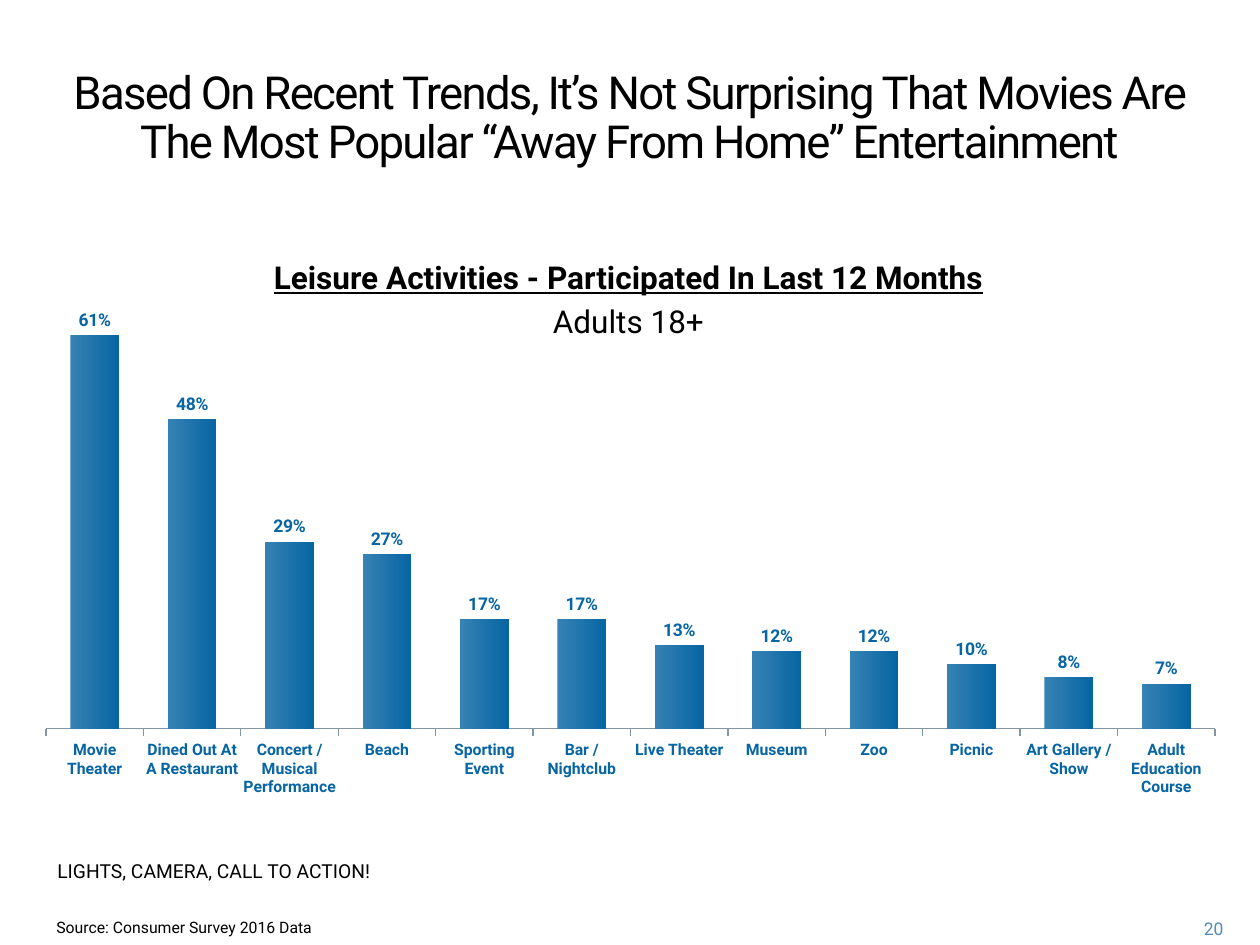
from lxml.etree import SubElement
from pptx import Presentation
from pptx.chart.data import CategoryChartData
from pptx.dml.color import RGBColor
from pptx.enum.chart import XL_CHART_TYPE, XL_LABEL_POSITION, XL_TICK_LABEL_POSITION, XL_TICK_MARK
from pptx.enum.text import MSO_ANCHOR, MSO_AUTO_SIZE, PP_ALIGN
from pptx.oxml import parse_xml
from pptx.oxml.ns import nsdecls, qn
from pptx.util import Emu, Pt

BLACK, BLUE, LIGHT_BLUE, NUMBER_BLUE, GREY = "000000", "0765A3", "3682B4", "508ABA", "8395A2"
LEFT, CENTER, RIGHT = PP_ALIGN.LEFT, PP_ALIGN.CENTER, PP_ALIGN.RIGHT

ACTIVITIES = {
    "Movie Theater": 0.61,
    "Dined Out At A Restaurant": 0.48,
    "Concert / Musical Performance": 0.29,
    "Beach": 0.27,
    "Sporting Event": 0.17,
    "Bar / Nightclub": 0.17,
    "Live Theater": 0.13,
    "Museum": 0.12,
    "Zoo": 0.12,
    "Picnic": 0.1,
    "Art Gallery / Show": 0.08,
    "Adult Education Course": 0.07,
}


def px(n):
    return Emu(round(n * 914400 / 126))


def rgb(color):
    return RGBColor.from_string(color)


class Deck:
    """Holds the style and the current slide, with a method for each kind of element."""

    def __init__(self, font):
        self.font = font
        self.prs = Presentation()
        self.prs.slide_width, self.prs.slide_height = px(1260), px(945)
        self.s = self.prs.slides.add_slide(self.prs.slide_layouts[1])

    def style(self, font, size, color, bold=False):
        font.name, font.size, font.bold = self.font, Pt(size), bold
        font.color.rgb = rgb(color)

    def frame(self, sp, x, y, w, h):
        sp.left, sp.top, sp.width, sp.height = px(x), px(y), px(w), px(h)
        tf = sp.text_frame
        tf.word_wrap = True
        tf.auto_size = MSO_AUTO_SIZE.NONE
        tf.vertical_anchor = MSO_ANCHOR.TOP
        return tf

    def run(self, p, text, size, color=BLACK, bold=False):
        r = p.add_run()
        r.text = text
        self.style(r.font, size, color, bold)
        return r

    def title(self, text, box, size, leading):
        p = self.frame(self.s.shapes.title, *box).paragraphs[0]
        p.alignment, p.line_spacing = CENTER, Pt(leading)
        r = self.run(p, text, size)
        r.font._element.set("spc", "-100")

    def heading(self, lines, box, size):
        sp = self.s.placeholders[1]
        tf = self.frame(sp, *box)
        for i, (text, strong) in enumerate(lines):
            p = tf.add_paragraph() if i else tf.paragraphs[0]
            pPr = p._p.get_or_add_pPr()
            pPr.set("marL", "0")
            pPr.set("indent", "0")
            SubElement(pPr, qn("a:buNone"))
            p.alignment = CENTER
            p.space_before = Pt(0.2 * size if i else 0)
            r = self.run(p, text, size, bold=strong)
            r.font.underline = strong
        self.s.shapes._spTree.append(sp._element)

    def text(self, text, box, size, color=BLACK, align=LEFT):
        sp = self.s.shapes.add_textbox(0, 0, 0, 0)
        p = self.frame(sp, *box).paragraphs[0]
        p.alignment = align
        self.run(p, text, size, color)

    def columns(self, values, box, plot, top):
        data = CategoryChartData(number_format="0%")
        data.categories = list(values)
        data.add_series("Series 1", list(values.values()))
        x, y, w, h = box
        chart = self.s.shapes.add_chart(
            XL_CHART_TYPE.COLUMN_CLUSTERED, px(x), px(y), px(w), px(h), data).chart
        self.style(chart.font, 18, BLACK)
        chart.has_legend = chart.has_title = False

        cat = chart.category_axis
        cat.major_tick_mark = XL_TICK_MARK.OUTSIDE
        cat.tick_label_position = XL_TICK_LABEL_POSITION.LOW
        cat.format.line.color.rgb, cat.format.line.width = rgb(GREY), Pt(0.75)
        self.style(cat.tick_labels.font, 9, BLUE, True)
        val = chart.value_axis
        val.minimum_scale, val.maximum_scale = 0, top
        val.has_major_gridlines = val.visible = False

        bars = chart.plots[0]
        bars.gap_width, bars.overlap, bars.vary_by_categories = 100, -20, False
        fill = bars.series[0].format.fill
        fill.gradient()
        fill.gradient_angle = 0
        for stop, color, position in zip(fill.gradient_stops, (LIGHT_BLUE, BLUE), (0, 1)):
            stop.color.rgb, stop.position = rgb(color), position
        bars.has_data_labels = True
        labels = bars.data_labels
        labels.show_value, labels.position = True, XL_LABEL_POSITION.OUTSIDE_END
        labels.number_format, labels.number_format_is_linked = "0%", False
        self.style(labels.font, 10, BLUE, True)
        self.place_plot(chart, box, plot)

    def place_plot(self, chart, box, plot):
        x, y, w, h = box
        left, top, width, height = plot
        parts = {"x": (left - x) / w, "y": (top - y) / h, "w": width / w, "h": height / h}
        area = chart._chartSpace.chart.plotArea
        for old in area.findall(qn("c:layout")):
            area.remove(old)
        sizes = "".join(f'<c:{k} val="{v:.4f}"/>' for k, v in parts.items())
        area.insert(0, parse_xml(
            f'<c:layout {nsdecls("c")}><c:manualLayout><c:layoutTarget val="inner"/>'
            f'<c:xMode val="edge"/><c:yMode val="edge"/>{sizes}</c:manualLayout></c:layout>'))


def main():
    d = Deck("Roboto")
    d.title("Based On Recent Trends, It’s Not Surprising That Movies Are "
            "The Most Popular “Away From Home” Entertainment", (23, 63, 1213, 176), 26, 28)
    d.columns(ACTIVITIES, (23, 266, 1217, 541), (46, 277, 1169, 452), 0.7)
    d.heading([("Leisure Activities - Participated In Last 12 Months", True),
               ("Adults 18+", False)], (22, 252, 1213, 50), 18)
    d.text("LIGHTS, CAMERA, CALL TO ACTION!", (45, 853, 388, 59), 11)
    d.text("Source: Consumer Survey 2016 Data", (44, 912, 766, 33), 9)
    d.text("20", (1159, 912, 77, 32), 10, NUMBER_BLUE, RIGHT)
    d.prs.save("out.pptx")


if __name__ == "__main__":
    main()
